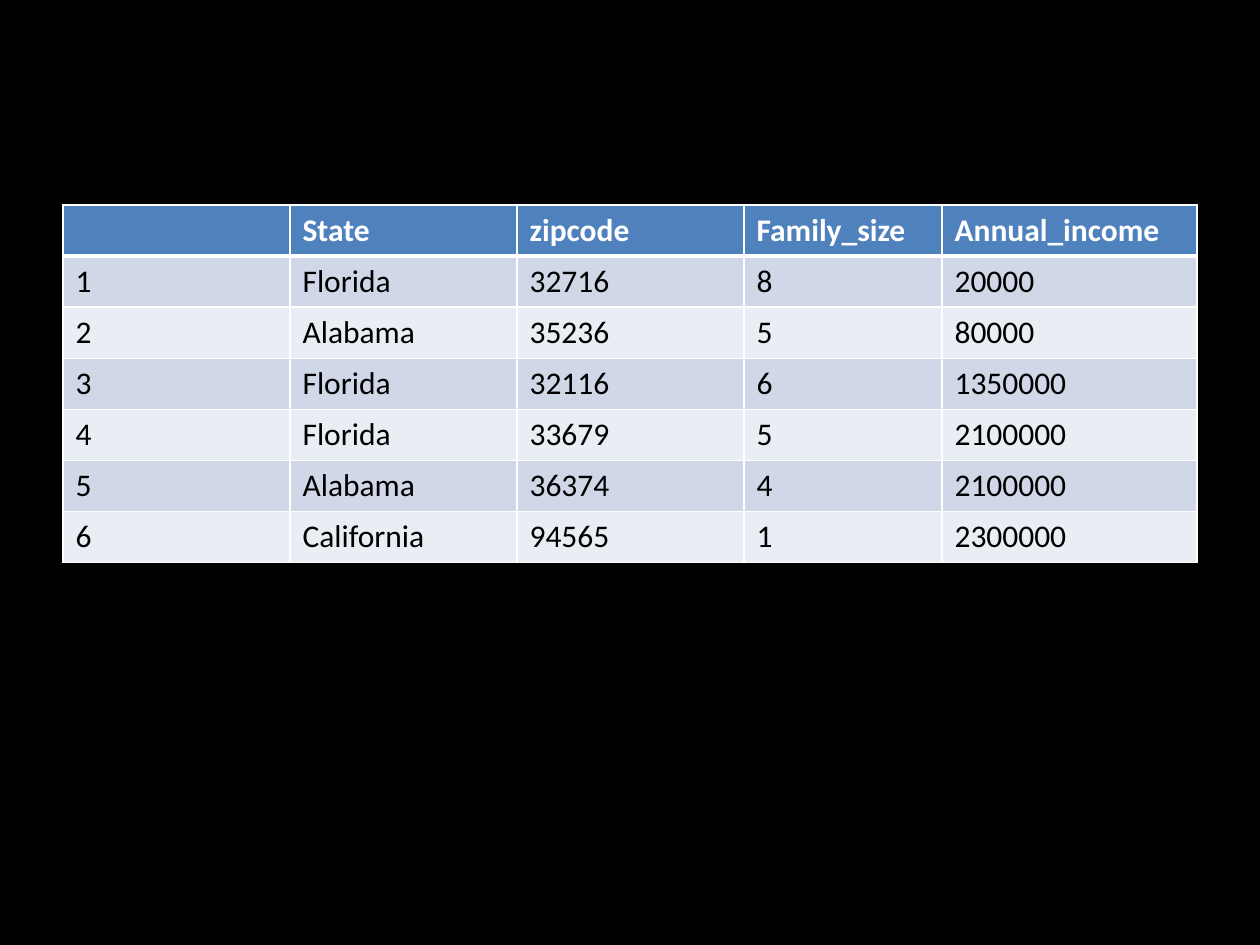
import pptx
import pptx.dml.color
import pptx.util
from lxml import etree
from pptx.oxml.ns import qn

PX = 914400 / 126  # EMU in one px
WHITE, BLACK, BLUE = "FFFFFF", "000000", "4F81BD"
BANDS = ["D0D8E8", "E9EDF4"]

HEADS = ["", "State", "zipcode", "Family_size", "Annual_income"]
ROWS = [
    ["1", "Florida", "32716", "8", "20000"],
    ["2", "Alabama", "35236", "5", "80000"],
    ["3", "Florida", "32116", "6", "1350000"],
    ["4", "Florida", "33679", "5", "2100000"],
    ["5", "Alabama", "36374", "4", "2100000"],
    ["6", "California", "94565", "1", "2300000"],
]
COLS = [227, 227, 227, 198, 255]


def emu(px):
    return pptx.util.Emu(round(px * PX))


def paint(fill, color):
    fill.solid()
    fill.fore_color.rgb = pptx.dml.color.RGBColor.from_string(color)


def edge(cell, side, width):
    props = cell._tc.get_or_add_tcPr()
    line = etree.SubElement(props, qn("a:ln" + side), w=str(pptx.util.Pt(width)))
    solid = etree.SubElement(line, qn("a:solidFill"))
    etree.SubElement(solid, qn("a:srgbClr"), val=WHITE)


def style(cell, text, color, back, bold, top, bottom):
    # Borders come before the fill in the cell properties
    for side, width in zip("LRTB", (1, 1, top, bottom)):
        edge(cell, side, width)
    paint(cell.fill, back)
    cell.text_frame.text = text
    for run in cell.text_frame.paragraphs[0].runs:
        run.font.name = "Calibri"
        run.font.size = pptx.util.Pt(18)
        run.font.bold = bold
        paint(run.font.fill, color)


def income_table(slide, left, top, width, height):
    lines = [HEADS] + ROWS
    frame = slide.shapes.add_table(
        len(lines), len(COLS), emu(left), emu(top), emu(width), emu(height))
    table = frame.table
    for col, share in zip(table.columns, COLS):
        col.width = emu(width * share / sum(COLS))
    for i, words in enumerate(lines):
        table.rows[i].height = emu(height / len(lines))
        head = i == 0
        back = BLUE if head else BANDS[(i - 1) % 2]
        for j, word in enumerate(words):
            # A heavy rule parts the header from the body
            style(table.cell(i, j), word, WHITE if head else BLACK, back, head,
                  3 if i == 1 else 1, 3 if head else 1)


def main():
    deck = pptx.Presentation()
    deck.slide_width, deck.slide_height = emu(1260), emu(945)
    slide = deck.slides.add_slide(deck.slide_layouts[6])
    paint(slide.background.fill, BLACK)
    income_table(slide, 63, 205, 1134, 357)
    deck.save("out.pptx")


if __name__ == "__main__":
    main()
